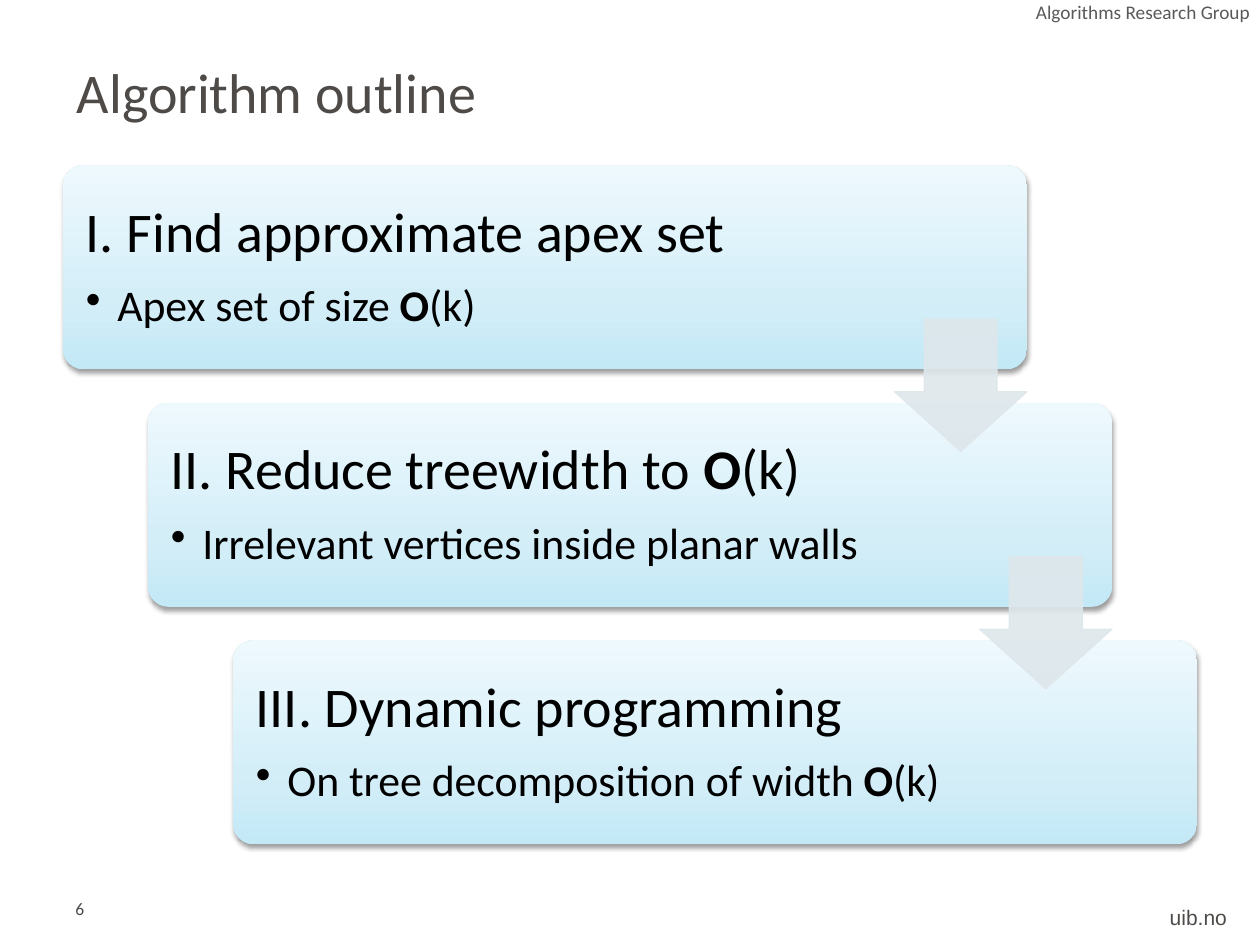
from lxml.etree import SubElement
from pptx import Presentation
from pptx.dml.color import RGBColor
from pptx.enum.shapes import MSO_SHAPE as Shape
from pptx.enum.text import MSO_ANCHOR as Anchor, PP_ALIGN as Align
from pptx.oxml import parse_xml
from pptx.oxml.ns import nsdecls, qn
from pptx.util import Pt

COLORS = {
    "title": "4E4A48", "header": "595959", "text": "000000", "arrow": "DEE7EB",
    "box_low": "C3E8F6", "box_mid": "D4EEF8", "box_high": "EEF9FD",
}
FONT = "Calibri"

# Each step: heading runs and detail runs, as (text, bold)
STEPS = [
    ([("I. Find approximate apex set", False)],
     [("Apex set of size ", False), ("O", True), ("(k)", False)]),
    ([("II. Reduce treewidth to ", False), ("O", True), ("(k)", False)],
     [("Irrelevant vertices inside planar walls", False)]),
    ([("III. Dynamic programming", False)],
     [("On tree decomposition of width ", False), ("O", True), ("(k)", False)]),
]


def rgb(name):
    return RGBColor.from_string(COLORS[name])


def add_run(p, text, size, color, font=FONT, bold=False):
    r = p.add_run()
    r.text = text
    r.font.name, r.font.size, r.font.bold = font, Pt(size), bold
    r.font.color.rgb = rgb(color)


def set_margins(tf, left, top, right, bottom):
    tf.margin_left, tf.margin_top = Pt(left), Pt(top)
    tf.margin_right, tf.margin_bottom = Pt(right), Pt(bottom)


def add_title(s, box, text):
    title = s.shapes.title
    title.left, title.top, title.width, title.height = map(Pt, box)
    tf = title.text_frame
    tf.vertical_anchor = Anchor.MIDDLE
    p = tf.paragraphs[0]
    p.alignment = Align.LEFT
    add_run(p, text, 32, "title")


def add_label(s, box, text, size, color, align, margins, font=FONT, wrap=True):
    tf = s.shapes.add_textbox(*map(Pt, box)).text_frame
    tf.word_wrap = wrap
    set_margins(tf, *margins)
    p = tf.paragraphs[0]
    p.alignment = align
    add_run(p, text, size, color, font)


def style_step_box(sp):
    """Give the box its three-stop gradient and soft shadow."""
    stops = "".join(
        f'<a:gs pos="{pos}"><a:srgbClr val="{COLORS[name]}"/></a:gs>'
        for pos, name in ((0, "box_low"), (35000, "box_mid"), (100000, "box_high")))
    sp.line.fill.background()
    spPr = sp._element.spPr
    spPr.find(qn("a:prstGeom")).addnext(parse_xml(
        f'<a:gradFill {nsdecls("a")} rotWithShape="1"><a:gsLst>{stops}</a:gsLst>'
        '<a:lin ang="16200000" scaled="0"/></a:gradFill>'))
    spPr.append(parse_xml(
        f'<a:effectLst {nsdecls("a")}><a:outerShdw blurRad="{Pt(3.1)}" dist="{Pt(1.6)}" '
        'dir="5400000" rotWithShape="0"><a:srgbClr val="000000"><a:alpha val="38000"/>'
        '</a:srgbClr></a:outerShdw></a:effectLst>'))


def add_bullet(p, indent):
    pPr = p._p.get_or_add_pPr()
    pPr.set("marL", str(Pt(indent)))
    pPr.set("indent", str(-Pt(indent)))
    SubElement(pPr, qn("a:buChar")).set("char", "•")


def add_step(s, box, heading, detail):
    sp = s.shapes.add_shape(Shape.ROUNDED_RECTANGLE, *map(Pt, box))
    sp.adjustments[0] = 0.1
    style_step_box(sp)
    tf = sp.text_frame
    tf.word_wrap = True
    tf.vertical_anchor = Anchor.MIDDLE
    set_margins(tf, *[9.6] * 4)
    bullet = tf.add_paragraph
    for p, runs, size, after in ((tf.paragraphs[0], heading, 32, 11.2),
                                 (bullet(), detail, 25, 3.75)):
        p.alignment = Align.LEFT
        p.line_spacing, p.space_after = 0.9, Pt(after)
        for text, bold in runs:
            add_run(p, text, size, "text", bold=bold)
    p.level = 1
    add_bullet(p, 18)


def add_arrow(s, box):
    sp = s.shapes.add_shape(Shape.DOWN_ARROW, *map(Pt, box))
    sp.shadow.inherit = False
    sp.adjustments[0], sp.adjustments[1] = 0.45, 0.55
    sp.adjustments[0], sp.adjustments[1] = 0.55, 0.45
    sp.fill.solid()
    sp.fill.fore_color.rgb = sp.line.color.rgb = rgb("arrow")
    sp.line.width = Pt(0.75)
    for color in sp._element.spPr.iter(qn("a:srgbClr")):
        SubElement(color, qn("a:alpha")).set("val", "90000")


def add_staircase(s, box):
    """Steps descending to the right, with an arrow across each gap."""
    left, top, width, height = box
    step_w, step_h, arrow = 550.8, 116.6, 75.6
    dx = (width - step_w) / (len(STEPS) - 1)
    dy = (height - step_h) / (len(STEPS) - 1)
    corners = [(left + i * dx, top + i * dy) for i in range(len(STEPS))]
    for (x, y), (heading, detail) in zip(corners, STEPS):
        add_step(s, (x, y, step_w, step_h), heading, detail)
    for x, y in corners[:-1]:
        add_arrow(s, (x + step_w - arrow, y + step_h - 28.8, arrow, arrow))


def main():
    prs = Presentation()
    prs.slide_width, prs.slide_height = Pt(720), Pt(540)
    s = prs.slides.add_slide(prs.slide_layouts[5])
    add_label(s, (661, 513.4, 47.5, 21.6), "uib.no", 12, "title", Align.CENTER,
              (7.2, 3.6, 7.2, 3.6), font="Arial", wrap=False)
    add_title(s, (36.7, 27.4, 648, 49.7), "Algorithm outline")
    add_staircase(s, (36, 94.5, 648, 388))
    add_label(s, (337.7, 0, 383.8, 14.4), "Algorithms Research Group", 11, "header",
              Align.RIGHT, (7.2, 0, 7.2, 0))
    add_label(s, (36, 513.4, 154, 21.6), "6", 10, "title", Align.LEFT,
              (7.2, 0, 7.2, 3.6))
    prs.save("out.pptx")


if __name__ == "__main__":
    main()
